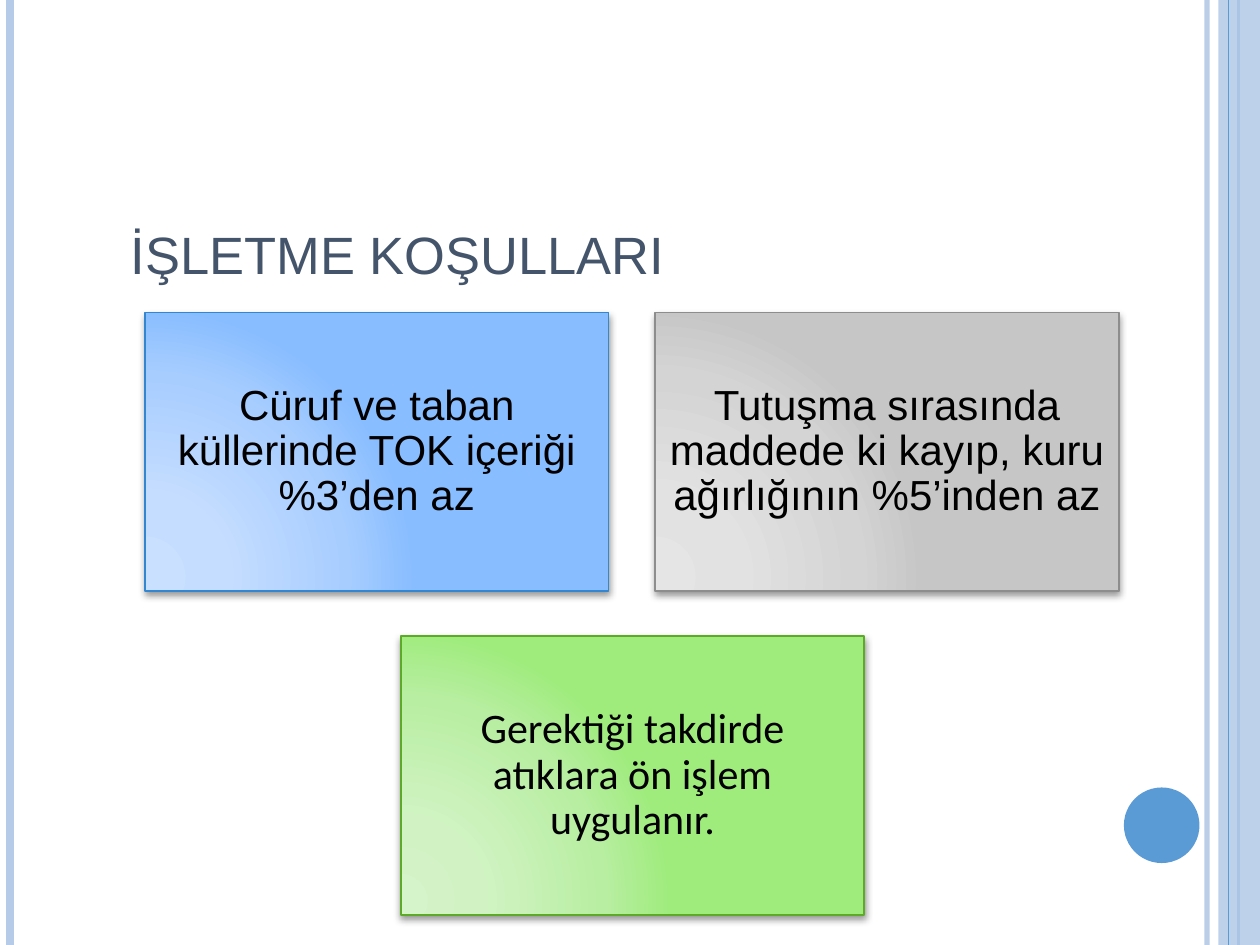
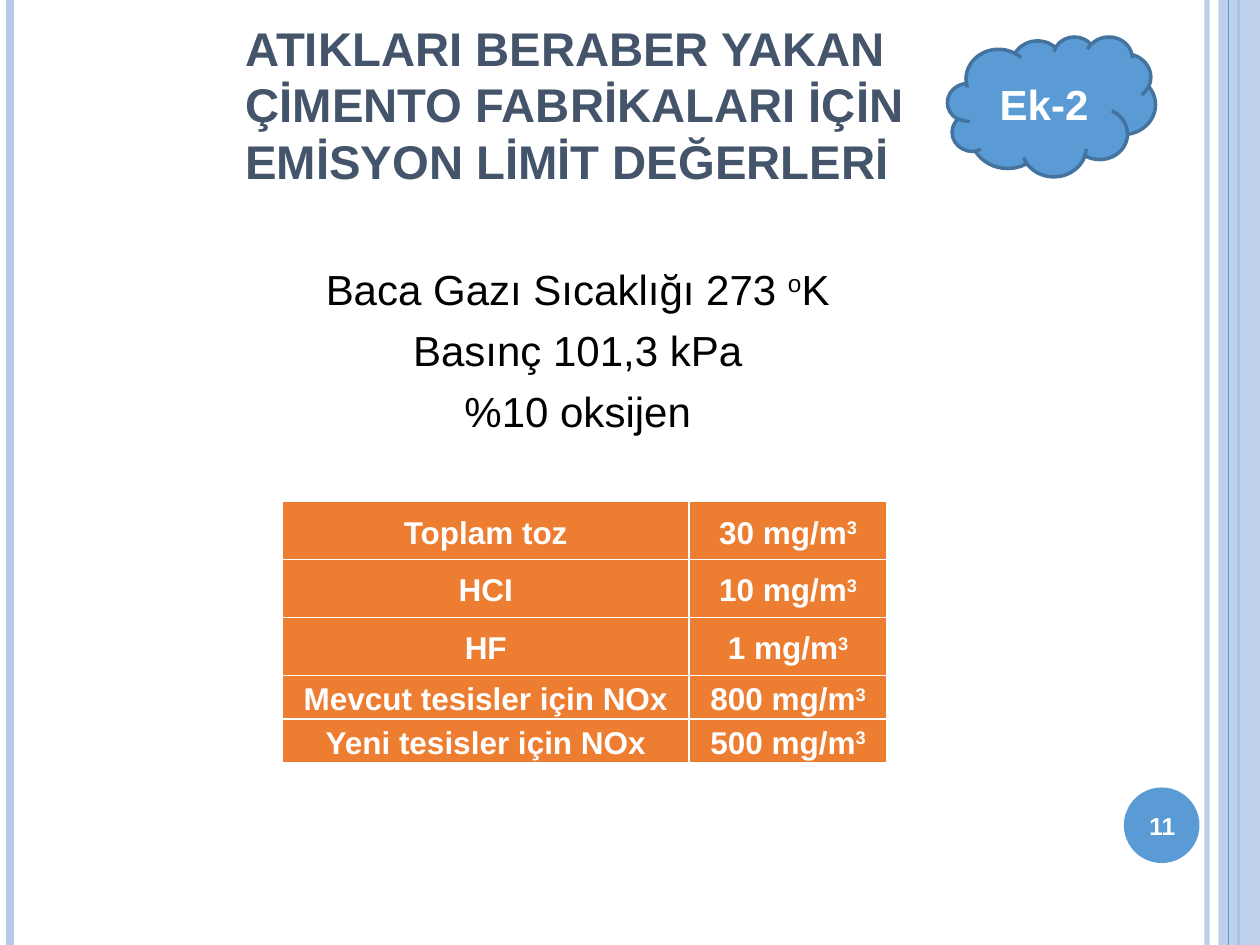
from lxml import etree
from pptx import Presentation
from pptx.dml.color import RGBColor
from pptx.enum.shapes import MSO_CONNECTOR, MSO_SHAPE
from pptx.enum.text import MSO_ANCHOR, PP_ALIGN
from pptx.oxml import parse_xml
from pptx.oxml.ns import nsdecls, qn
from pptx.util import Inches, Pt

LEFT, CENTER = PP_ALIGN.LEFT, PP_ALIGN.CENTER
TOP, MIDDLE, BOTTOM = MSO_ANCHOR.TOP, MSO_ANCHOR.MIDDLE, MSO_ANCHOR.BOTTOM
STRAIGHT = MSO_CONNECTOR.STRAIGHT

COLORS = {
    "pale": "B5CBE7",
    "blue": "5B9BD5",
    "cloud_edge": "43739E",
    "title": "44546A",
    "orange": "ED7D31",
    "black": "000000",
    "white": "FFFFFF",
}
RGB = {name: RGBColor.from_string(value) for name, value in COLORS.items()}


def write(frame, lines, size, color, align=CENTER, anchor=MIDDLE, bold=False,
          font="Arial", spacing=1.0, gap=0):
    """Fill a text frame; text between ^ marks is superscript."""
    frame.word_wrap = True
    frame.vertical_anchor = anchor
    for index, line in enumerate(lines):
        paragraph = frame.paragraphs[0] if index == 0 else frame.add_paragraph()
        paragraph.alignment = align
        paragraph.line_spacing = spacing
        if index:
            paragraph.space_before = Pt(gap)
        paragraph.font.name = font
        paragraph.font.size = Pt(size)
        paragraph.font.bold = bold
        paragraph.font.color.rgb = RGB[color]
        for part, text in enumerate(line.split("^")):
            if not text:
                continue
            for row, piece in enumerate(text.split("\n")):
                if row:
                    paragraph.add_line_break()
                run = paragraph.add_run()
                run.text = piece
                if part % 2:
                    run._r.get_or_add_rPr().set("baseline", "30000")


def set_alpha(element, percent):
    for color in element.iter(qn("a:srgbClr")):
        etree.SubElement(color, qn("a:alpha")).set("val", str(percent * 1000))


prs = Presentation()
prs.slide_width, prs.slide_height = Inches(10), Inches(7.5)
blank = prs.slide_layouts[6]

# Shared frame and title: title text, left, top, width, height, size, bold
titles = [
    ("İŞLETME KOŞULLARI", 0.94, 0.86, 8.62, 1.45, 30, False),
    ("ATIKLARI BERABER YAKAN ÇİMENTO FABRİKALARI İÇİN\nEMİSYON LİMİT DEĞERLERİ",
     1.85, 0.6, 6.82, 0.95, 27, True),
]
# x, colour, width, opacity
rules = [
    (9.58, "pale", 3, 93),
    (0.08, "pale", 4.5, 100),
    (9.83, "blue", 1.5, 100),
    (9.75, "blue", 0.75, 100),
]
slides = []
for title, left, top, width, height, size, bold in titles:
    slide = prs.slides.add_slide(blank)
    slides.append(slide)
    for x, color, weight, opacity in rules:
        if x == 9.75:
            band = slide.shapes.add_shape(
                MSO_SHAPE.RECTANGLE, Inches(9.67), 0, Inches(0.33), prs.slide_height)
            band.shadow.inherit = False
            band.fill.solid()
            band.fill.fore_color.rgb = RGB["pale"]
            band.line.fill.background()
            set_alpha(band._element.spPr, 87)
        rule = slide.shapes.add_connector(
            STRAIGHT, Inches(x), 0, Inches(x), prs.slide_height)
        rule.line.color.rgb = RGB[color]
        rule.line.width = Pt(weight)
        if opacity < 100:
            set_alpha(rule._element.spPr, opacity)
        etree.SubElement(rule._element.spPr, qn("a:effectLst"))
    disc = slide.shapes.add_shape(
        MSO_SHAPE.OVAL, Inches(8.92), Inches(6.25), Inches(0.6), Inches(0.6))
    disc.shadow.inherit = False
    disc.fill.solid()
    disc.fill.fore_color.rgb = RGB["blue"]
    disc.line.fill.background()
    heading = slide.shapes.add_textbox(
        Inches(left), Inches(top), Inches(width), Inches(height))
    write(heading.text_frame, [title], size, "title", LEFT, BOTTOM, bold)

conditions_slide, limits_slide = slides

# Slide 1: operating conditions
conditions = [
    (1.15, 2.48, "Cüruf ve taban küllerinde TOK içeriği %3’den az", "Arial",
     ["CAE0FF", "C5DDFF", "A7CDFF", "88BDFF"], "3486D1"),
    (5.2, 2.48, "Tutuşma sırasında maddede ki kayıp, kuru ağırlığının %5’inden az",
     "Arial", ["E5E5E5", "E2E2E2", "D4D4D4", "C6C6C6"], "8D8D8D"),
    (3.18, 5.05, "Gerektiği takdirde atıklara ön işlem uygulanır.", "Calibri",
     ["D5F4C9", "D1F3C3", "B8EEA2", "9FEC7D"], "5CAA27"),
]
for left, top, text, font, shades, edge in conditions:
    card = conditions_slide.shapes.add_shape(
        MSO_SHAPE.RECTANGLE, Inches(left), Inches(top), Inches(3.68), Inches(2.21))
    card.line.color.rgb = RGBColor.from_string(edge)
    card.line.width = Pt(1)
    card.shadow.inherit = False
    stops = "".join(
        f'<a:gs pos="{position}000"><a:srgbClr val="{shade}"/></a:gs>'
        for position, shade in zip((0, 30, 75, 100), shades))
    properties = card._element.spPr
    properties.find(qn("a:prstGeom")).addnext(parse_xml(
        f'<a:gradFill {nsdecls("a")} rotWithShape="1"><a:gsLst>{stops}</a:gsLst>'
        '<a:path path="circle"><a:fillToRect l="5000" t="100000" r="120000" '
        'b="10000"/></a:path></a:gradFill>'))
    properties.find(qn("a:effectLst")).append(parse_xml(
        f'<a:outerShdw {nsdecls("a")} blurRad="{Pt(4)}" dist="{Pt(2)}" '
        'dir="5400000" rotWithShape="0"><a:srgbClr val="000000">'
        '<a:alpha val="40000"/></a:srgbClr></a:outerShdw>'))
    frame = card.text_frame
    frame.margin_left = frame.margin_right = Inches(0.1)
    frame.margin_top = frame.margin_bottom = Inches(0.1)
    write(frame, [text], 24, "black", font=font, spacing=0.9)

# Slide 2: emission limits
reference = limits_slide.shapes.add_textbox(
    Inches(0.5), Inches(2.04), Inches(8.17), Inches(5.33))
write(reference.text_frame,
      ["Baca Gazı Sıcaklığı 273 ^o^K", "Basınç 101,3 kPa", "%10 oksijen"],
      24, "black", anchor=TOP, gap=6)

page_number = limits_slide.shapes.add_textbox(
    Inches(8.89), Inches(6.27), Inches(0.67), Inches(0.57))
write(page_number.text_frame, ["11"], 14, "white", bold=True)

annex = limits_slide.shapes.add_shape(
    MSO_SHAPE.CLOUD, Inches(7.52), Inches(0.29), Inches(1.65), Inches(1.11))
annex.shadow.inherit = False
annex.fill.solid()
annex.fill.fore_color.rgb = RGB["blue"]
annex.line.color.rgb = RGB["cloud_edge"]
annex.line.width = Pt(2)
write(annex.text_frame, ["Ek-2"], 24, "white", bold=True)

limits = [
    ("Toplam toz", "30 mg/m^3^", 0.46),
    ("HCI", "10 mg/m^3^", 0.46),
    ("HF", "1 mg/m^3^", 0.46),
    ("Mevcut tesisler için NOx", "800 mg/m^3^", 0.32),
    ("Yeni tesisler için NOx", "500 mg/m^3^", 0.32),
]
table = limits_slide.shapes.add_table(
    len(limits), 2, Inches(2.24), Inches(3.98), Inches(4.8), Inches(2.02)).table
table.first_row = table.horz_banding = False
table.columns[0].width, table.columns[1].width = Inches(3.23), Inches(1.57)
for row, (pollutant, limit, height) in enumerate(limits):
    table.rows[row].height = Inches(height)
    for column, text in enumerate((pollutant, limit)):
        cell = table.cell(row, column)
        cell.fill.solid()
        cell.fill.fore_color.rgb = RGB["orange"]
        cell.margin_left = cell.margin_right = Inches(0.07)
        cell.margin_top = cell.margin_bottom = 0
        write(cell.text_frame, [text], 18, "white", bold=True, spacing=1.15)
        cell.vertical_anchor = MIDDLE

prs.save("out.pptx")
